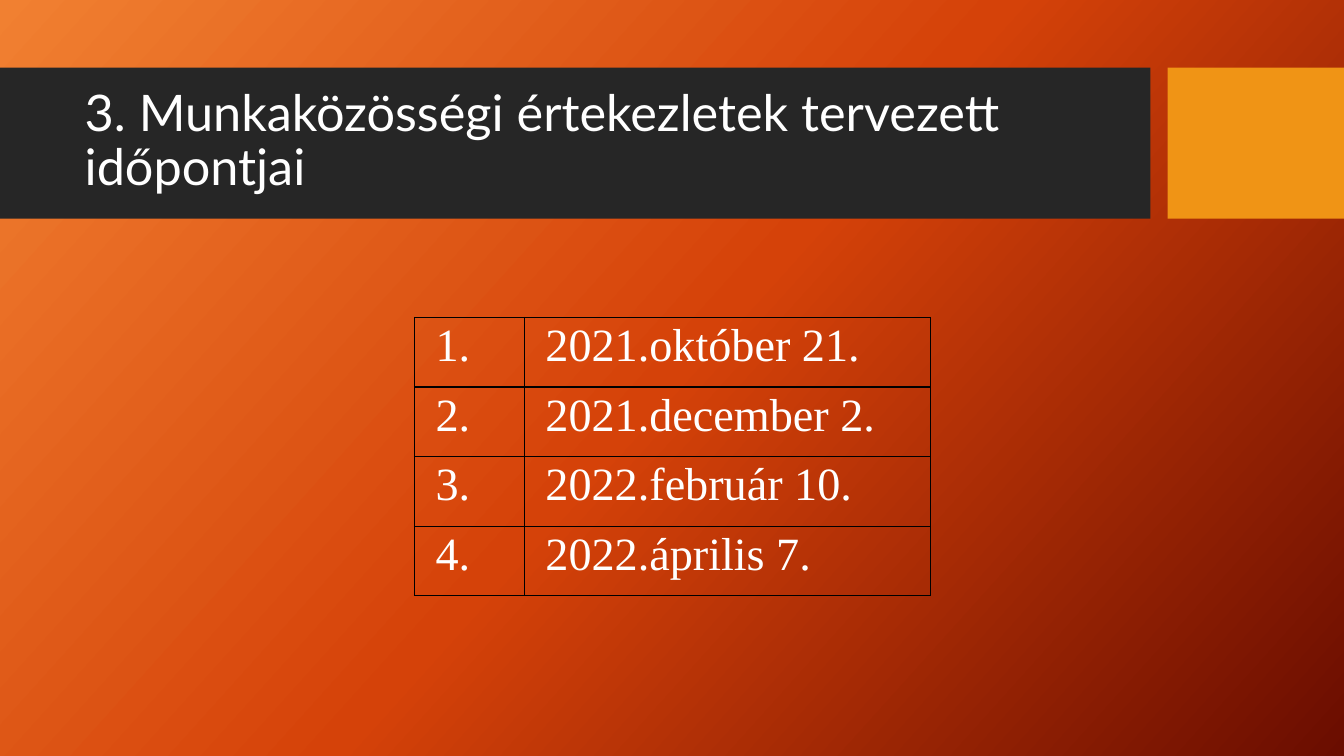
from copy import deepcopy

from pptx import Presentation
from pptx import util as u
from pptx.dml.color import RGBColor
from pptx.enum import shapes, text
from pptx.oxml import parse_xml
from pptx.oxml.ns import nsdecls, qn

COLORS = {
    "glow": "F18031", "orange": "D54209", "maroon": "6A0D00",
    "band": "262626", "accent": "F09415", "text": "FFFFFF", "border": "000000",
}
WIDTH, HEIGHT = 13.33, 7.5
TITLE = "3. Munkaközösségi értekezletek tervezett időpontjai"
MEETINGS = ["2021.október 21.", "2021.december 2.", "2022.február 10.", "2022.április 7."]


def rgb(name):
    return RGBColor.from_string(COLORS[name])


def style(p, font, size):
    p.alignment = text.PP_ALIGN.LEFT
    p.font.name = font
    p.font.size = u.Pt(size)
    p.font.color.rgb = rgb("text")


def paint_background(s):
    fill = s.background.fill
    fill.gradient()
    fill.gradient_angle = 360 - 42
    stops = s.element.find(".//" + qn("a:gsLst"))
    stops.insert(1, deepcopy(stops[0]))
    for stop, position, name in zip(fill.gradient_stops, (0, 0.5, 1), ("glow", "orange", "maroon")):
        stop.position = position
        stop.color.rgb = rgb(name)


def add_bar(s, left, top, width, height, color):
    sp = s.shapes.add_shape(shapes.MSO_SHAPE.RECTANGLE, *map(u.Inches, (left, top, width, height)))
    sp.shadow.inherit = False
    sp.fill.solid()
    sp.fill.fore_color.rgb = rgb(color)
    sp.line.fill.background()


def add_header(s, top, height):
    accent = 1.75
    gap = 0.17
    band = WIDTH - accent - gap
    add_bar(s, 0, top, band, height, "band")
    add_bar(s, band + gap, top, accent, height, "accent")

    title = s.shapes.title
    s.shapes.element.append(title.element)
    title.left, title.top = u.Inches(0.74), u.Inches(top + 0.15)
    title.width, title.height = u.Inches(band - 0.9), u.Inches(height - 0.32)
    tf = title.text_frame
    tf.text = TITLE
    tf.word_wrap = True
    tf.auto_size = text.MSO_AUTO_SIZE.NONE
    tf.vertical_anchor = text.MSO_ANCHOR.MIDDLE
    p = tf.paragraphs[0]
    p.line_spacing = 0.9
    style(p, "Lato", 36)


def add_borders(cell):
    tcPr = cell._tc.get_or_add_tcPr()
    for index, side in enumerate(("lnL", "lnR", "lnT", "lnB")):
        tcPr.insert(index, parse_xml(
            f'<a:{side} {nsdecls("a")} w="{u.Pt(1)}"><a:solidFill>'
            f'<a:srgbClr val="{COLORS["border"]}"/></a:solidFill></a:{side}>'))


def add_meeting_table(s, left, top, col_widths, row_height):
    rows = len(MEETINGS)
    box = (left, top, sum(col_widths), rows * row_height)
    table = s.shapes.add_table(rows, len(col_widths), *map(u.Inches, box)).table
    table.first_row = table.horz_banding = False
    for column, width in zip(table.columns, col_widths):
        column.width = u.Inches(width)
    for number, (row, date) in enumerate(zip(table.rows, MEETINGS), 1):
        row.height = u.Inches(row_height)
        for cell, label in zip(row.cells, (f"{number}.", date)):
            cell.text = label
            cell.fill.background()
            cell.margin_left = cell.margin_right = u.Inches(0.21)
            cell.margin_top, cell.margin_bottom = u.Inches(0.03), 0
            cell.vertical_anchor = text.MSO_ANCHOR.TOP
            style(cell.text_frame.paragraphs[0], "Times New Roman", 33)
            add_borders(cell)


def main():
    prs = Presentation()
    prs.slide_width, prs.slide_height = u.Inches(WIDTH), u.Inches(HEIGHT)
    s = prs.slides.add_slide(prs.slide_layouts[5])
    paint_background(s)
    add_header(s, 0.67, 1.5)
    add_meeting_table(s, 4.11, 3.15, (1.09, 4.03), 0.69)
    prs.save("out.pptx")


if __name__ == "__main__":
    main()
